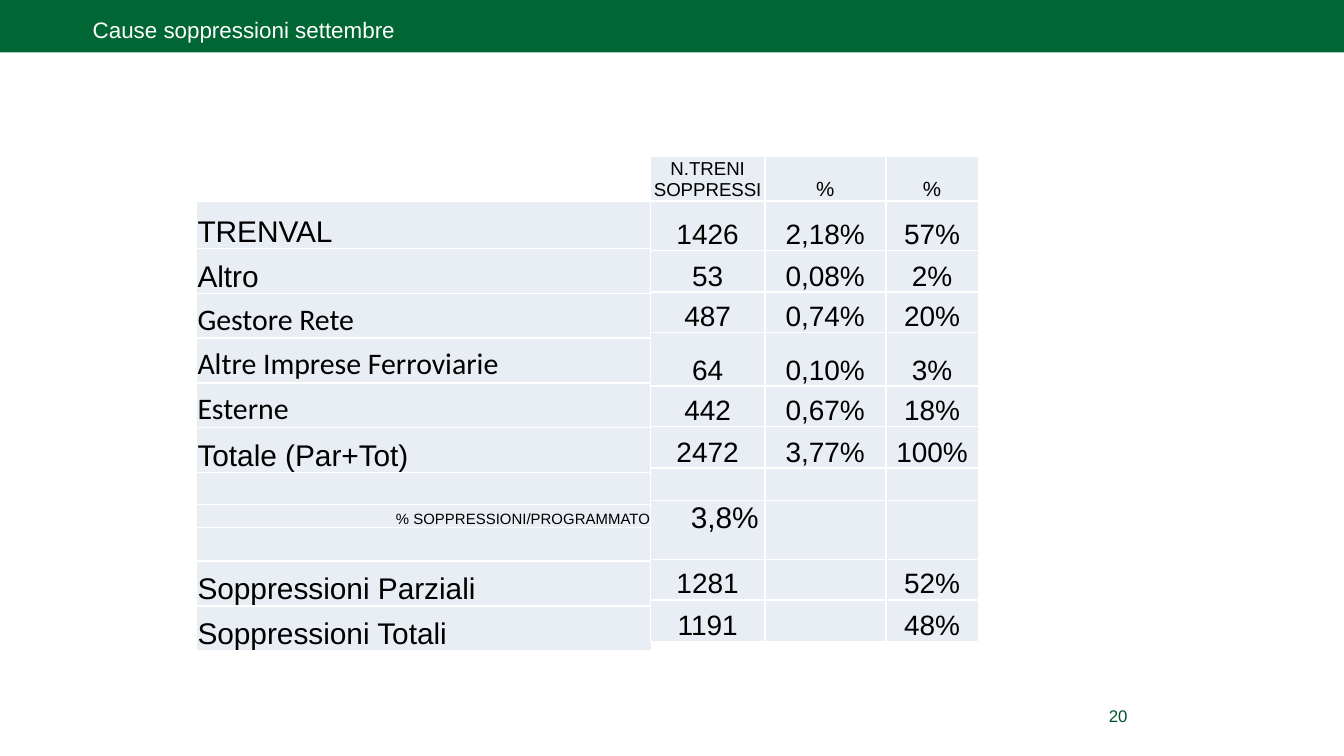
import pptx
import pptx.util
import pptx.dml.color
import pptx.enum.shapes
import pptx.enum.text
import pptx.oxml

Inches = pptx.util.Inches
Align = pptx.enum.text.PP_ALIGN
Anchor = pptx.enum.text.MSO_ANCHOR
NS = "http://schemas.openxmlformats.org/drawingml/2006/main"
WIDE = 10
HIGH = WIDE * 9 / 16
ROW = 1 / 3

CAUSES = [
    ("TRENVAL", 0.35, {}),
    ("Altro", ROW, {}),
    ("Gestore Rete", ROW, {"face": "Calibri"}),
    ("Altre Imprese Ferroviarie", ROW, {"face": "Calibri"}),
    ("Esterne", ROW, {"face": "Calibri"}),
    ("Totale (Par+Tot)", ROW, {}),
    ("", 0.24, {}),
    ("% SOPPRESSIONI/PROGRAMMATO", 0.17, {"size": 8, "align": Align.RIGHT}),
    ("", 0.25, {}),
    ("Soppressioni Parziali", ROW, {}),
    ("Soppressioni Totali", ROW, {}),
]
COUNTS = [
    (0.31, "N.TRENI SOPPRESSI", "%", "%"),
    (0.37, "1426", "2,18%", "57%"),
    (0.31, "53", "0,08%", "2%"),
    (0.30, "487", "0,74%", "20%"),
    (0.40, "64", "0,10%", "3%"),
    (0.30, "442", "0,67%", "18%"),
    (0.31, "2472", "3,77%", "100%"),
    (0.24, "", "", ""),
    (0.44, "3,8%", "", ""),
    (0.30, "1281", "", "52%"),
    (0.31, "1191", "", "48%"),
]


def color(code):
    return pptx.dml.color.RGBColor.from_string(code)


def write(frame, text, size=16, face="Arial", ink="000000", align=Align.LEFT):
    para = frame.paragraphs[0]
    para.alignment = align
    if not text:
        para._p.get_or_add_endParaRPr().set("sz", "800")
        return
    run = para.add_run()
    run.text = text
    run.font.size = pptx.util.Pt(size)
    run.font.name = face
    run.font.color.rgb = color(ink)


def label(slide, box, text, top, **form):
    frame = slide.shapes.add_textbox(*map(Inches, box)).text_frame
    frame.word_wrap = True
    frame.vertical_anchor = Anchor.MIDDLE
    frame.margin_left = frame.margin_right = Inches(0.09)
    frame.margin_top, frame.margin_bottom = Inches(top), Inches(0.04)
    write(frame, text, **form)


def header(slide, box):
    left, top, width, height = box
    kind = pptx.enum.shapes.MSO_SHAPE.RECTANGLE
    band = slide.shapes.add_shape(kind, *map(Inches, box))
    band.shadow.inherit = False
    band.fill.solid()
    band.fill.fore_color.rgb = color("006633")
    band.line.fill.background()
    label(slide, (left + 0.6, top + 0.05, 6.96, 0.31),
          "Cause soppressioni settembre", 0.07, size=12, ink="FFFFFF")


def style(cell):
    props = cell._tc.get_or_add_tcPr()
    for side in "LRTB":
        props.append(pptx.oxml.parse_xml(
            f'<a:ln{side} xmlns:a="{NS}" w="12700"><a:solidFill>'
            f'<a:srgbClr val="FFFFFF"/></a:solidFill></a:ln{side}>'))
    cell.fill.solid()
    cell.fill.fore_color.rgb = color("E9EDF4")
    cell.margin_left = cell.margin_right = cell.margin_top = Inches(0.01)
    cell.margin_bottom = 0
    cell.vertical_anchor = Anchor.BOTTOM


def grid(slide, left, top, widths, heights):
    table = slide.shapes.add_table(
        len(heights), len(widths), Inches(left), Inches(top),
        Inches(sum(widths)), Inches(sum(heights))).table
    table.first_row = table.horz_banding = False
    for col, width in zip(table.columns, widths):
        col.width = Inches(width)
    for row, height in zip(table.rows, heights):
        row.height = Inches(height)
    for cell in table.iter_cells():
        style(cell)
    return table


def causes(slide, left, top):
    table = grid(slide, left, top, [3.39], [row[1] for row in CAUSES])
    for cell, (text, _, form) in zip(table.iter_cells(), CAUSES):
        write(cell.text_frame, text, **form)


def counts(slide, left, top):
    table = grid(slide, left, top, [0.85, 0.9, 0.69],
                 [row[0] for row in COUNTS])
    for i, (_, *texts) in enumerate(COUNTS):
        for j, text in enumerate(texts):
            cell = table.cell(i, j)
            if i == 0:
                cell.margin_top = 0
            if text == "3,8%":
                cell.vertical_anchor = Anchor.TOP
                cell.margin_left = Inches(0.3)
                write(cell.text_frame, text)
            else:
                size = 15 if i else 11 if j else 10
                write(cell.text_frame, text, size=size, align=Align.CENTER)


def main():
    deck = pptx.Presentation()
    deck.slide_width, deck.slide_height = Inches(WIDE), Inches(HIGH)
    slide = deck.slides.add_slide(deck.slide_layouts[6])
    header(slide, (0, 0, WIDE, 0.39))
    causes(slide, 1.46, 1.5)
    counts(slide, 4.84, 1.16)
    label(slide, (8.03, 5.21, 0.58, 0.24), "20", 0.04,
          size=9, ink="00542A", align=Align.CENTER)
    deck.save("out.pptx")


if __name__ == "__main__":
    main()
